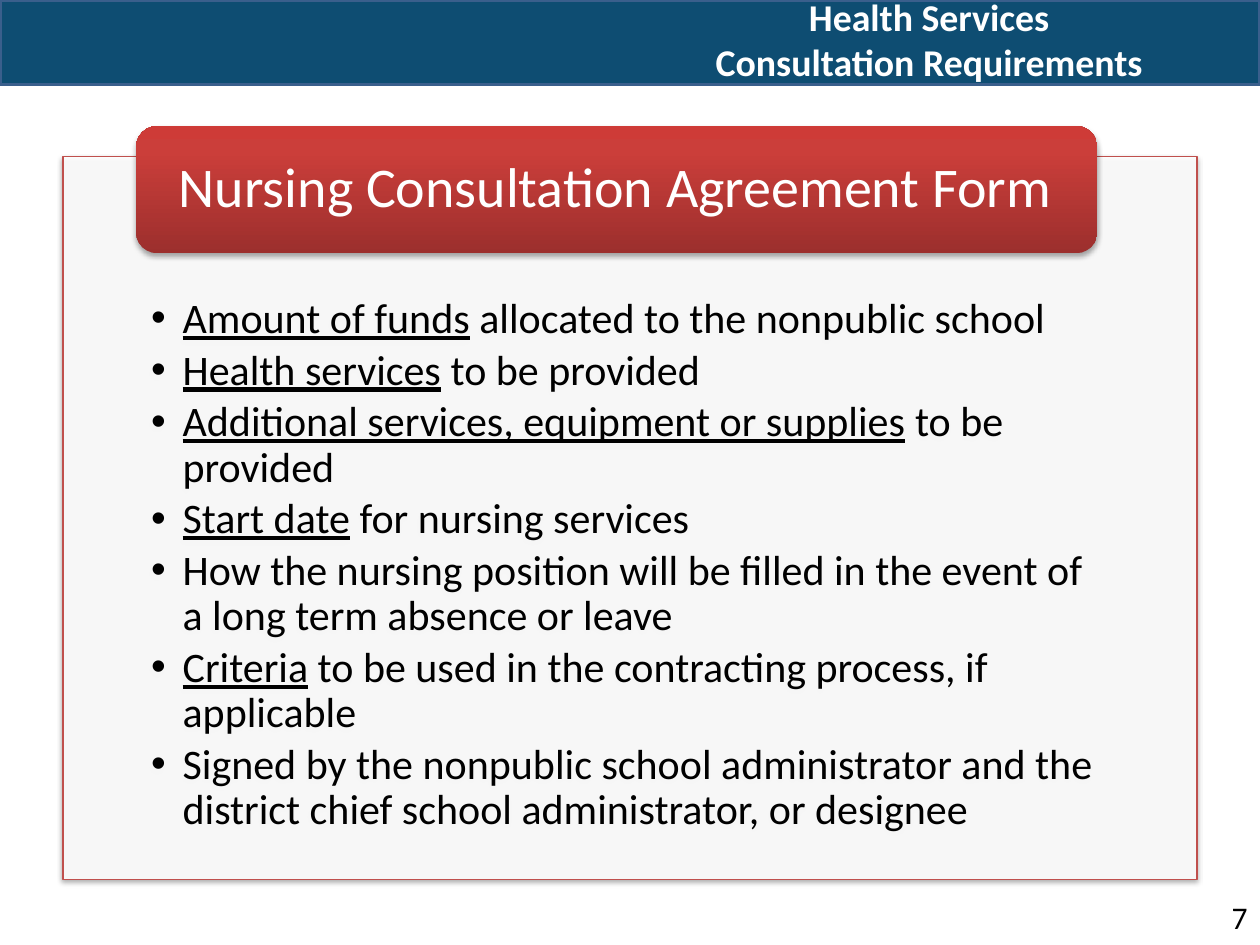
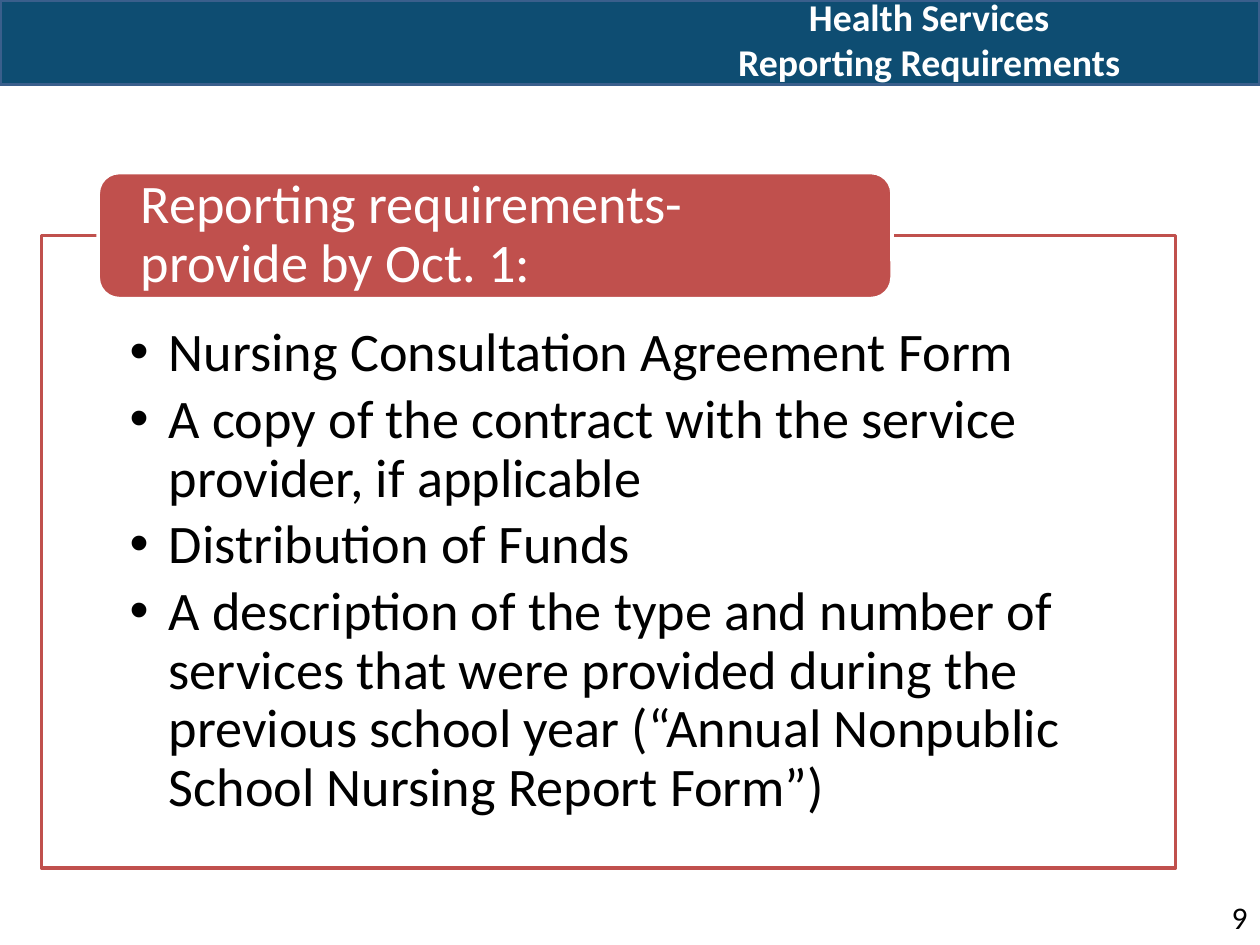
from copy import deepcopy
from lxml.etree import SubElement
from pptx import Presentation
from pptx.dml.color import RGBColor
from pptx.enum.shapes import MSO_SHAPE
from pptx.enum.text import MSO_ANCHOR, MSO_AUTO_SIZE, PP_ALIGN
from pptx.oxml.ns import qn
from pptx.util import Pt

PX = 9144
HUES = {
    "band": "0E4D72", "edge": "3A5F8C", "red": "C0504D",
    "white": "FFFFFF", "black": "000000",
    "deep": "9C2F2D", "mid": "CB3E3A", "light": "CE3B37",
}
FRAME = {"word_wrap": True, "auto_size": MSO_AUTO_SIZE.NONE}
SIDES = ("margin_left", "margin_top", "margin_right", "margin_bottom")


def hue(name):
    return RGBColor.from_string(HUES[name])


def apply(item, **values):
    for key, value in values.items():
        setattr(item, key, value)


def place(box):
    return [n * PX for n in box]


def style(font, size, color, **more):
    apply(font, name="Calibri", size=Pt(size), **more)
    font.color.rgb = hue(color)


def setup(frame, insets, anchor):
    apply(frame, **FRAME, vertical_anchor=anchor)
    apply(frame, **dict(zip(SIDES, place(insets))))


def block(slide, kind, box, fill, line=None, width=2):
    shape = slide.shapes.add_shape(kind, *place(box))
    shape.shadow.inherit = False
    shape.fill.solid()
    shape.fill.fore_color.rgb = hue(fill)
    if line:
        shape.line.color.rgb = hue(line)
        shape.line.width = Pt(width)
    else:
        shape.line.fill.background()
    return shape


def shade(shape):
    effects = shape._element.spPr.find(qn("a:effectLst"))
    shadow = SubElement(effects, qn("a:outerShdw"), blurRad=str(Pt(3.1)),
                        dist=str(Pt(1.8)), dir="5400000", rotWithShape="0")
    color = SubElement(shadow, qn("a:srgbClr"), val=HUES["black"])
    SubElement(color, qn("a:alpha"), val="35000")


def blend(shape, stops):
    shape.fill.gradient()
    shape.fill.gradient_angle = 90
    marks = shape._element.spPr.find(".//" + qn("a:gsLst"))
    marks.append(deepcopy(marks[0]))
    for mark, (spot, name) in zip(shape.fill.gradient_stops, stops):
        mark.position = spot
        mark.color.rgb = hue(name)


def lines(frame, texts):
    for i, text in enumerate(texts):
        para = frame.paragraphs[0] if i == 0 else frame.add_paragraph()
        apply(para, alignment=PP_ALIGN.LEFT, line_spacing=0.9)
        yield para, text


def panel(slide, box, line, insets, size, indent, items):
    shape = block(slide, MSO_SHAPE.RECTANGLE, box, "white", "red", line)
    color = shape._element.spPr.find(qn("a:solidFill"))[0]
    SubElement(color, qn("a:alpha"), val="90000")
    setup(shape.text_frame, insets, MSO_ANCHOR.TOP)
    for para, text in lines(shape.text_frame, items):
        props = para._p.get_or_add_pPr()
        props.set("marL", str(indent * PX))
        props.set("indent", str(-indent * PX))
        SubElement(props, qn("a:buFont"), typeface="Arial")
        SubElement(props, qn("a:buChar"), char="•")
        para.space_after = Pt(round(size * 0.15, 1))
        for i, part in enumerate(text.split("_")):
            if part:
                run = para.add_run()
                run.text = part
                style(run.font, size, "black", underline=i % 2 == 1)
    return shape


def header(slide, box, shift, extent, size, texts, line=None):
    spot = (box[0] + shift[0], box[1] + shift[1], *extent)
    shape = block(slide, MSO_SHAPE.ROUNDED_RECTANGLE, spot, "red", line)
    setup(shape.text_frame, (29, 5, 29, 5), MSO_ANCHOR.MIDDLE)
    for para, text in lines(shape.text_frame, texts):
        para.text = text
        style(para.font, size, "white")
    return shape


def base(deck, topic, number):
    slide = deck.slides.add_slide(deck.slide_layouts[5])
    band = block(slide, MSO_SHAPE.RECTANGLE, (0, 0, 1000, 67), "band", "edge")
    title = slide.shapes.title
    title._element.addprevious(band._element)
    apply(title, **dict(zip(("left", "top", "width", "height"),
                            place((475, 0, 525, 62)))))
    title.text_frame.text = f"Health Services\v{topic}"
    setup(title.text_frame, (10, 5, 10, 5), MSO_ANCHOR.MIDDLE)
    para = title.text_frame.paragraphs[0]
    para.alignment = PP_ALIGN.CENTER
    style(para.font, 21.6, "white", bold=True)
    note = slide.shapes.add_textbox(*place((933, 708, 67, 40))).text_frame
    setup(note, (10, 5, 10, 5), MSO_ANCHOR.TOP)
    para = note.paragraphs[0]
    apply(para, text=number, alignment=PP_ALIGN.RIGHT)
    style(para.font, 18, "black")
    return slide


def consult(deck):
    slide = base(deck, "Consultation Requirements", "7")
    box = (50, 124, 900, 574)
    shade(panel(slide, box, 0.75, (70, 112, 70, 19), 24, 25, (
        "_Amount of funds_ allocated to the nonpublic school",
        "_Health services_ to be provided",
        "_Additional services, equipment or supplies_ to be provided",
        "_Start date_ for nursing services",
        "How the nursing position will be filled in the event of "
        "a long term absence or leave",
        "_Criteria_ to be used in the contracting process, if applicable",
        "Signed by the nonpublic school administrator and the "
        "district chief school administrator, or designee",
    )))
    tab = header(slide, box, (58, -24), (763, 101), 32,
                 ["Nursing Consultation Agreement Form"])
    blend(tab, ((0, "deep"), (0.8, "mid"), (1, "light")))
    shade(tab)


def report(deck):
    slide = base(deck, "Reporting Requirements", "9")
    box = (33, 187, 900, 502)
    panel(slide, box, 2, (70, 71, 70, 24), 31, 31, (
        "Nursing Consultation Agreement Form",
        "A copy of the contract with the service provider, if applicable",
        "Distribution of Funds",
        "A description of the type and number of services that were "
        "provided during the previous school year "
        "(“Annual Nonpublic School Nursing Report Form”)",
    ))
    header(slide, box, (45, -50), (630, 100), 31,
           ["Reporting requirements-", "provide by Oct. 1:"], "white")


def main():
    deck = Presentation()
    apply(deck, slide_width=1000 * PX, slide_height=750 * PX)
    consult(deck)
    report(deck)
    deck.save("out.pptx")


if __name__ == "__main__":
    main()
